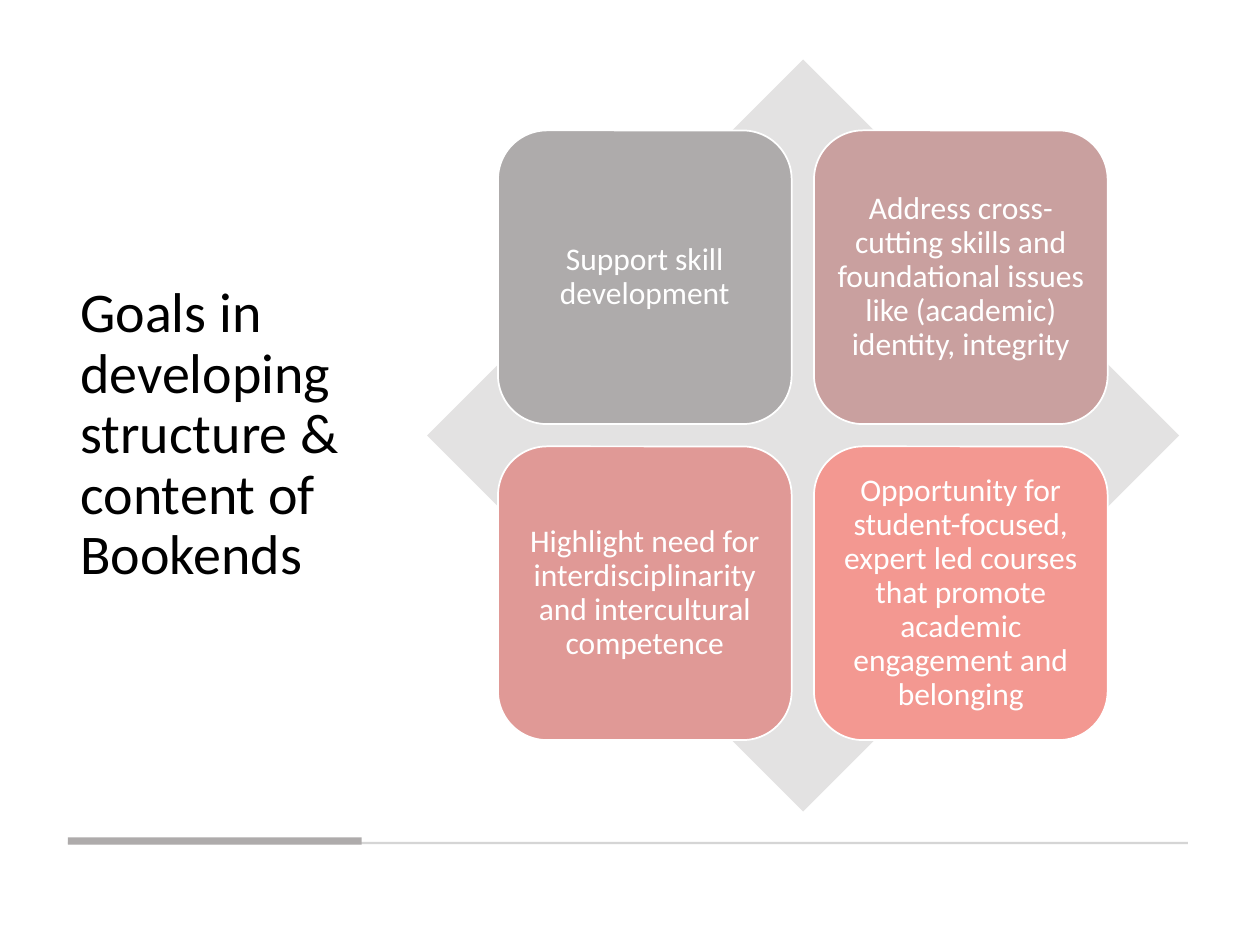
from pptx import Presentation
from pptx.dml.color import RGBColor
from pptx.enum.shapes import MSO_SHAPE
from pptx.enum.text import MSO_ANCHOR, PP_ALIGN
from pptx.util import Cm, Pt

BLACK = RGBColor(0x00, 0x00, 0x00)
WHITE = RGBColor(0xFF, 0xFF, 0xFF)
RULE_GRAY = RGBColor(0xD5, 0xD5, 0xD5)
DIAMOND_GRAY = RGBColor(0xE3, 0xE2, 0xE2)
GRAY = RGBColor(0xAE, 0xAB, 0xAB)
DUSTY_ROSE = RGBColor(0xC9, 0xA0, 0x9F)
ROSE = RGBColor(0xE0, 0x99, 0x96)
CORAL = RGBColor(0xF3, 0x98, 0x91)

MARGIN, TOP, BODY = 1.37, 1.2, 15.16
TILE, STEP = 5.92, 6.37
GRID_LEFT, GRID_TOP = 10.04, 2.63
GOALS = [
    ("Support skill development", GRAY),
    ("Address cross-cutting skills and foundational issues like "
     "(academic) identity, integrity", DUSTY_ROSE),
    ("Highlight need for interdisciplinarity and intercultural competence", ROSE),
    ("Opportunity for student-focused, expert led courses that promote "
     "academic engagement and belonging", CORAL),
]


def set_attrs(obj, values):
    """Set each named attribute on an object."""
    for name, value in values.items():
        setattr(obj, name, value)


def write_text(sp, text, size, color, align, inset):
    """Write one vertically centred paragraph into a shape."""
    tf = sp.text_frame
    set_attrs(tf, {"word_wrap": True, "vertical_anchor": MSO_ANCHOR.MIDDLE})
    if inset is not None:
        sides = ("left", "top", "right", "bottom")
        set_attrs(tf, {f"margin_{side}": Cm(inset) for side in sides})
    p = tf.paragraphs[0]
    set_attrs(p, {"alignment": align, "line_spacing": 0.9})
    r = p.add_run()
    r.text = text
    set_attrs(r.font, {"name": "Calibri", "size": Pt(size)})
    r.font.color.rgb = color


def add_block(s, kind, box, fill, line=None):
    """Add a filled shape with an optional outline."""
    sp = s.shapes.add_shape(kind, *map(Cm, box))
    sp.shadow.inherit = False
    sp.fill.solid()
    sp.fill.fore_color.rgb = fill
    if line is None:
        sp.line.fill.background()
    else:
        sp.line.color.rgb = line
        sp.line.width = Pt(1)
    return sp


def add_title(s, text):
    """Add the title beside the diagram."""
    sp = s.shapes.add_textbox(*map(Cm, (MARGIN, TOP, 7.06, BODY)))
    write_text(sp, text, 32, BLACK, PP_ALIGN.LEFT, None)


def add_goals(s):
    """Add the diamond and its two-by-two grid of goals."""
    add_block(s, MSO_SHAPE.DIAMOND, (8.61, TOP, BODY, BODY), DIAMOND_GRAY)
    for i, (text, fill) in enumerate(GOALS):
        row, col = divmod(i, 2)
        box = (GRID_LEFT + col * STEP, GRID_TOP + row * STEP, TILE, TILE)
        sp = add_block(s, MSO_SHAPE.ROUNDED_RECTANGLE, box, fill, WHITE)
        write_text(sp, text, 18, WHITE, PP_ALIGN.CENTER, 0.18)


def main():
    """Build and save the slide."""
    prs = Presentation()
    set_attrs(prs, {"slide_width": Cm(25.4), "slide_height": Cm(19.05)})
    s = prs.slides.add_slide(prs.slide_layouts[6])
    add_title(s, "Goals in developing structure & content of Bookends")
    add_block(s, MSO_SHAPE.RECTANGLE, (MARGIN, 16.97, 22.58, 0.05), RULE_GRAY)
    add_block(s, MSO_SHAPE.RECTANGLE, (MARGIN, 16.88, TILE, 0.15), GRAY)
    add_goals(s)
    prs.save("out.pptx")


if __name__ == "__main__":
    main()
